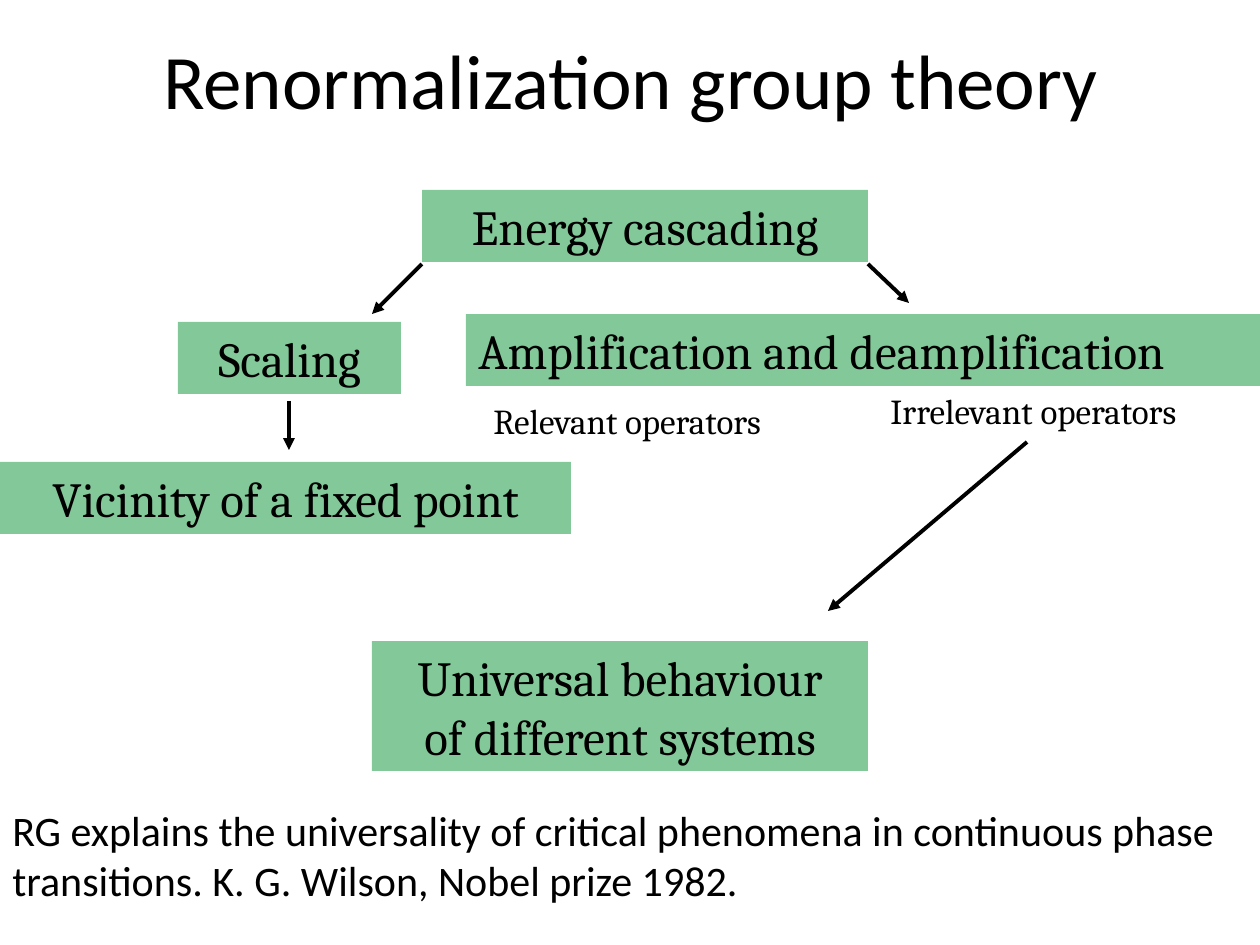
import pptx
import pptx.dml.color
import pptx.enum.shapes
import pptx.enum.text
import pptx.oxml.ns
import pptx.util
from lxml import etree

SCALE = 914400 / 126  # EMU in one px
GREEN = pptx.dml.color.RGBColor(0x82, 0xC8, 0x99)
BLACK = pptx.dml.color.RGBColor(0, 0, 0)
ALIGN = pptx.enum.text.PP_ALIGN
ANCHOR = pptx.enum.text.MSO_ANCHOR


def emu(*px):
    return [pptx.util.Emu(round(n * SCALE)) for n in px]


def write(shape, text, font="Cambria", size=28, align=ALIGN.CENTER,
          anchor=ANCHOR.TOP):
    frame = shape.text_frame
    frame.word_wrap = True
    frame.vertical_anchor = anchor
    frame.text = text
    for para in frame.paragraphs:
        para.alignment = align
        for run in para.runs:
            run.font.name = font
            run.font.size = pptx.util.Pt(size)
            run.font.color.rgb = BLACK


def add_box(slide, place, text, **style):
    kind = pptx.enum.shapes.MSO_SHAPE.RECTANGLE
    box = slide.shapes.add_shape(kind, *emu(*place))
    box.shadow.inherit = False
    box.fill.solid()
    box.fill.fore_color.rgb = GREEN
    box.line.fill.background()
    write(box, text, **style)


def add_label(slide, place, text, **style):
    write(slide.shapes.add_textbox(*emu(*place)), text, **style)


def add_arrow(slide, ends):
    kind = pptx.enum.shapes.MSO_CONNECTOR.STRAIGHT
    arrow = slide.shapes.add_connector(kind, *emu(*ends))
    arrow.line.color.rgb = BLACK
    arrow.line.width = pptx.util.Pt(2.25)
    name = pptx.oxml.ns.qn
    etree.SubElement(arrow.line._get_or_add_ln(), name("a:tailEnd"),
                     type="triangle")
    etree.SubElement(arrow._element.spPr, name("a:effectLst"))


def main():
    deck = pptx.Presentation()
    deck.slide_width, deck.slide_height = emu(1260, 945)
    slide = deck.slides.add_slide(deck.slide_layouts[6])

    # Title
    add_label(slide, (64, 0, 1134, 158), "Renormalization group theory",
              font="Calibri", size=44, anchor=ANCHOR.MIDDLE)

    # Concept boxes
    add_box(slide, (422, 190, 446, 72), "Energy cascading")
    add_box(slide, (178, 322, 223, 72), "Scaling")
    add_box(slide, (0, 462, 571, 72), "Vicinity of a fixed point")
    add_box(slide, (466, 314, 794, 72), "Amplification and deamplification",
            align=ALIGN.LEFT)
    add_box(slide, (372, 641, 496, 130),
            "Universal behaviour\nof different systems")

    # Operator labels
    add_label(slide, (481, 393, 323, 54), "Relevant operators",
              size=20, align=ALIGN.LEFT)
    add_label(slide, (878, 383, 348, 54), "Irrelevant operators",
              size=20, align=ALIGN.LEFT)

    # Arrows between the concepts
    for ends in [(422, 264, 372, 314), (289, 401, 289, 450),
                 (868, 264, 909, 303), (1027, 442, 828, 611)]:
        add_arrow(slide, ends)

    # Closing remark
    add_label(slide, (0, 798, 1260, 113),
              "RG explains the universality of critical phenomena in "
              "continuous phase transitions. K. G. Wilson, Nobel prize 1982.",
              font="Calibri", size=24, align=ALIGN.LEFT)

    deck.save("out.pptx")


if __name__ == "__main__":
    main()
